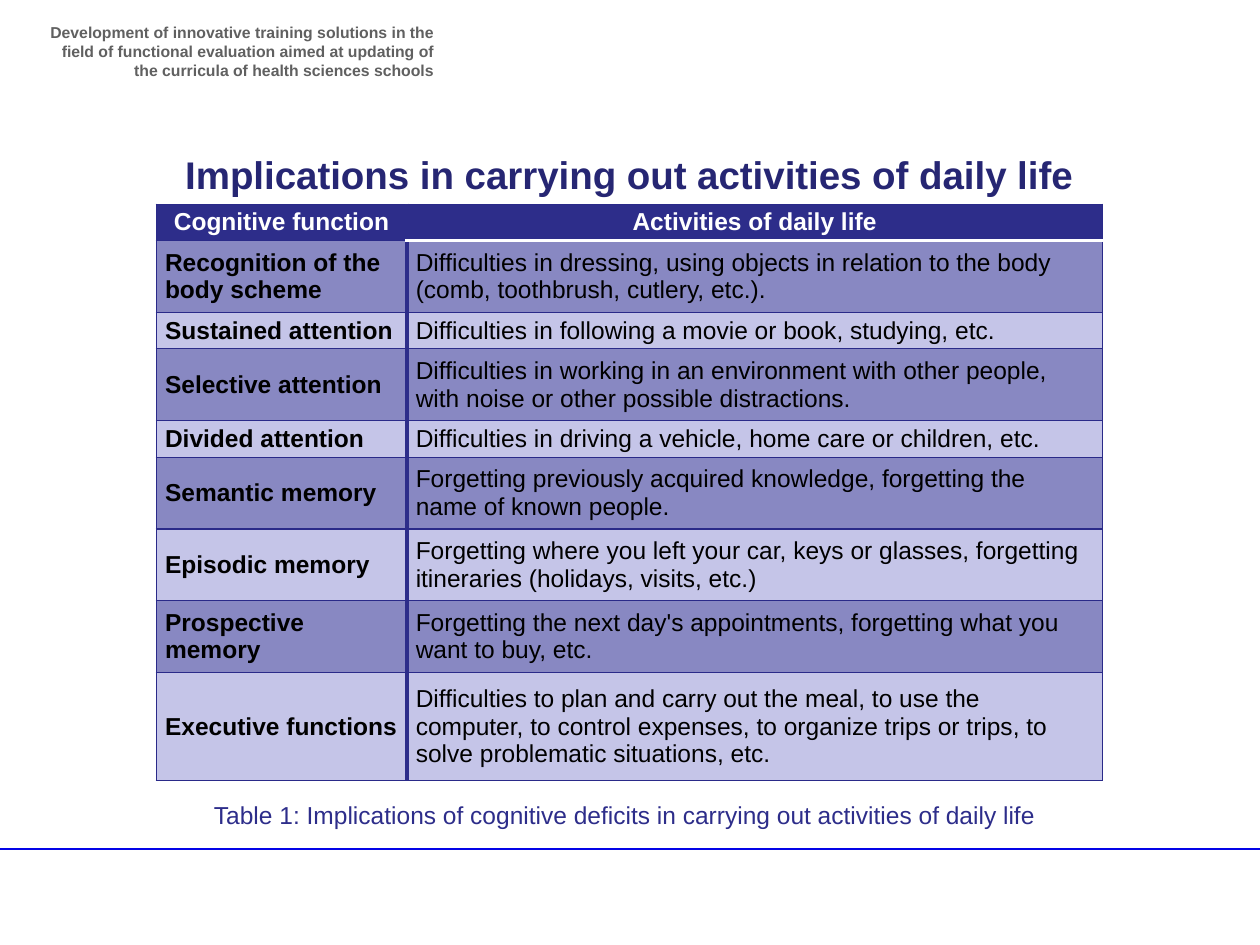
from dataclasses import dataclass

from lxml.etree import SubElement
from pptx import Presentation
from pptx.dml.color import RGBColor
from pptx.enum.shapes import MSO_CONNECTOR as Connector
from pptx.enum.text import MSO_ANCHOR as Anchor, PP_ALIGN as Align
from pptx.oxml.ns import qn
from pptx.util import Inches, Pt


@dataclass(frozen=True)
class Theme:
    font: str = "Arial"
    navy: str = "2D2D8A"
    title: str = "262673"
    grid: str = "2A2A89"
    dark_row: str = "8888C2"
    light_row: str = "C5C5E8"
    white: str = "FFFFFF"
    black: str = "000000"
    grey: str = "606060"
    rule: str = "0404E6"
    title_size: int = 22
    body_size: int = 14
    small_size: int = 9
    thin: float = 0.75
    thick: float = 2


THEME = Theme()
PROJECT = ("Development of innovative training solutions in the ﬁeld of functional "
           "evaluation aimed at updating of the curricula of health sciences schools")
HEADINGS = ("Cognitive function", "Activities of daily life")
# Each row: function, effect on daily life, row height in inches
FUNCTIONS = [
    ("Recognition of the body scheme",
     "Difficulties in dressing, using objects in relation to the body "
     "(comb, toothbrush, cutlery, etc.).", 0.57),
    ("Sustained attention",
     "Difficulties in following a movie or book, studying, etc.", 0.29),
    ("Selective attention",
     "Difficulties in working in an environment with other people, "
     "with noise or other possible distractions.", 0.57),
    ("Divided attention",
     "Difficulties in driving a vehicle, home care or children, etc.", 0.29),
    ("Semantic memory",
     "Forgetting previously acquired knowledge, forgetting the "
     "name of known people.", 0.57),
    ("Episodic memory",
     "Forgetting where you left your car, keys or glasses, forgetting "
     "itineraries (holidays, visits, etc.)", 0.57),
    ("Prospective memory",
     "Forgetting the next day's appointments, forgetting what you "
     "want to buy, etc.", 0.57),
    ("Executive functions",
     "Difficulties to plan and carry out the meal, to use the computer, to control "
     "expenses, to organize trips or trips, to solve problematic situations, etc.", 0.86),
]


def write(frame, text, *, size, color, bold=False, align=Align.LEFT):
    frame.word_wrap = True
    para = frame.paragraphs[0]
    para.alignment = align
    span = para.add_run()
    span.text = text
    span.font.name = THEME.font
    span.font.size = Pt(size)
    span.font.bold = bold
    span.font.color.rgb = RGBColor.from_string(color)


def add_text(page, box, text, **style):
    shape = page.shapes.add_textbox(*map(Inches, box))
    write(shape.text_frame, text, **style)


def add_rule(page, left, right, y):
    line = page.shapes.add_connector(
        Connector.STRAIGHT, Inches(left), Inches(y), Inches(right), Inches(y))
    line.line.color.rgb = RGBColor.from_string(THEME.rule)
    line.line.width = Pt(1)
    SubElement(line._element.spPr, qn("a:effectLst"))


def set_borders(cell, **borders):
    """Draw the sides L, R, T and B, each given as (colour, points)."""
    props = cell._tc.get_or_add_tcPr()
    for index, side in enumerate("LRTB"):
        color, width = borders[side]
        edge = props.makeelement(qn(f"a:ln{side}"), {"w": str(Pt(width))})
        fill = SubElement(edge, qn("a:solidFill"))
        SubElement(fill, qn("a:srgbClr"), val=color)
        props.insert(index, edge)


def fill_cell(cell, text, row, column):
    header, first = row == 0, column == 0
    cell.vertical_anchor = Anchor.MIDDLE
    cell.margin_left = cell.margin_right = Inches(0.07)
    cell.margin_top = cell.margin_bottom = 0
    write(cell.text_frame, text, size=THEME.body_size, bold=header or first,
          color=THEME.white if header else THEME.black,
          align=Align.CENTER if header else Align.LEFT)
    shade = THEME.navy if header else (THEME.light_row, THEME.dark_row)[row % 2]
    cell.fill.solid()
    cell.fill.fore_color.rgb = RGBColor.from_string(shade)

    thin, divider = (THEME.grid, THEME.thin), (THEME.navy, THEME.thick)
    under_header = thin if first else (THEME.white, THEME.thick)
    set_borders(cell,
                L=thin if first else divider,
                R=divider if first else thin,
                T=under_header if row == 1 else thin,
                B=under_header if header else thin)


def add_function_table(page, box):
    rows = [(*HEADINGS, 0.29), *FUNCTIONS]
    frame = page.shapes.add_table(len(rows), len(HEADINGS), *map(Inches, box))
    table = frame.table
    first_width = 1.99
    for column, width in zip(table.columns, (first_width, box[2] - first_width)):
        column.width = Inches(width)
    for r, (*texts, height) in enumerate(rows):
        table.rows[r].height = Inches(height)
        for c, text in enumerate(texts):
            fill_cell(table.cell(r, c), text, r, c)


def build_slide(page):
    add_rule(page, -0.05, 10, 6.74)
    add_text(page, (0.28, 0.13, 3.26, 0.47), PROJECT, size=THEME.small_size,
             color=THEME.grey, bold=True, align=Align.RIGHT)
    add_function_table(page, (1.24, 1.62, 7.51, 4.57))
    add_text(page, (0.39, 1.15, 9.21, 0.47),
             "Implications in carrying out activities of daily life",
             size=THEME.title_size, color=THEME.title, bold=True, align=Align.CENTER)
    add_text(page, (0.55, 6.3, 8.82, 0.34),
             "Table 1: Implications of cognitive deficits in carrying out "
             "activities of daily life",
             size=THEME.body_size, color=THEME.navy, align=Align.CENTER)


def main():
    deck = Presentation()
    deck.slide_width, deck.slide_height = Inches(10), Inches(7.5)
    build_slide(deck.slides.add_slide(deck.slide_layouts[6]))
    deck.save("out.pptx")


if __name__ == "__main__":
    main()
